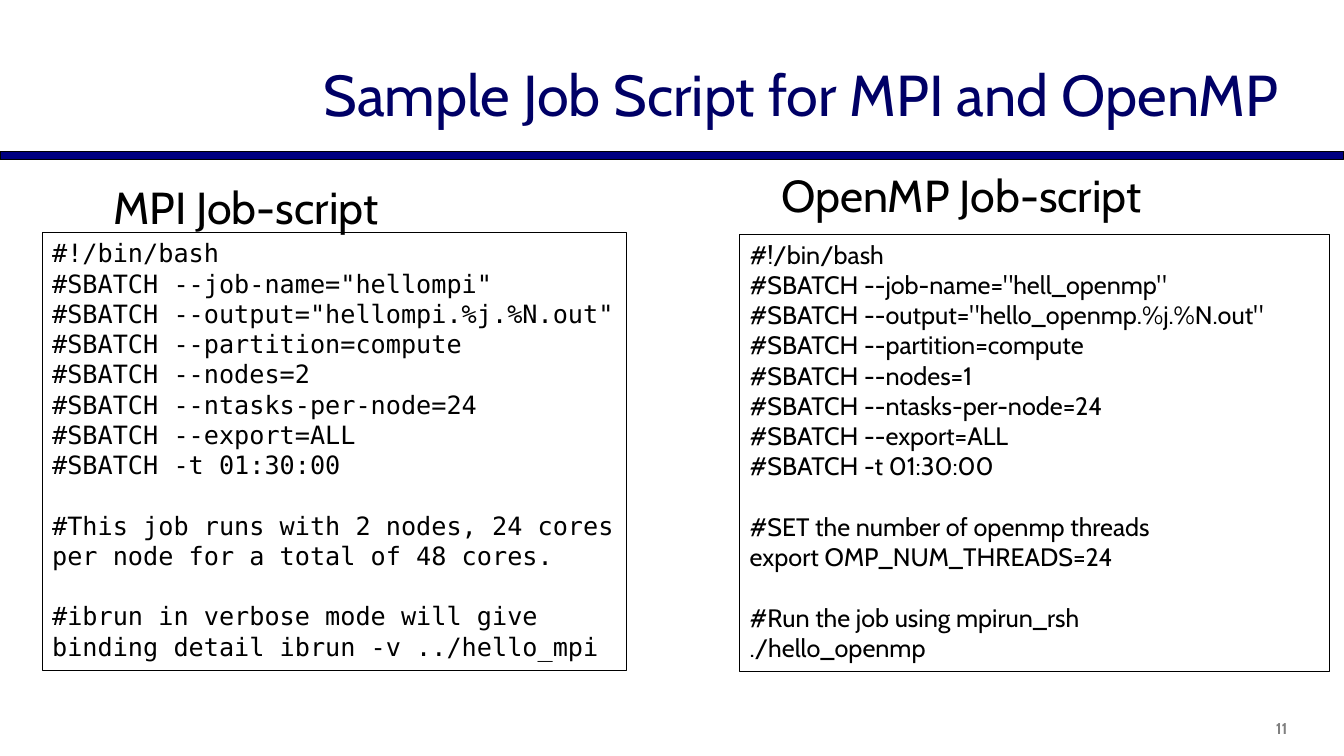
import pptx
import pptx.dml.color
import pptx.enum.shapes
import pptx.enum.text
import pptx.util

Pt = pptx.util.Pt
ALIGN = pptx.enum.text.PP_ALIGN
ANCHOR = pptx.enum.text.MSO_ANCHOR

MPI_SCRIPT = [
    ["#!/bin/bash",
     '#SBATCH --job-name="hellompi"',
     '#SBATCH --output="hellompi.%j.%N.out" #SBATCH --partition=compute',
     "#SBATCH --nodes=2",
     "#SBATCH --ntasks-per-node=24",
     "#SBATCH --export=ALL",
     "#SBATCH -t 01:30:00"],
    ["#This job runs with 2 nodes, 24 cores per node for a total of 48 cores."],
    ["#ibrun in verbose mode will give binding detail ibrun -v ../hello_mpi"],
]
OPENMP_SCRIPT = [
    ["#!/bin/bash",
     '#SBATCH --job-name="hell_openmp"',
     '#SBATCH --output="hello_openmp.%j.%N.out"',
     "#SBATCH --partition=compute",
     "#SBATCH --nodes=1",
     "#SBATCH --ntasks-per-node=24",
     "#SBATCH --export=ALL",
     "#SBATCH -t 01:30:00"],
    ["#SET the number of openmp threads",
     "export OMP_NUM_THREADS=24"],
    ["#Run the job using mpirun_rsh",
     "./hello_openmp"],
]


def color(value):
    return pptx.dml.color.RGBColor.from_string(value)


def write(paragraph, text, size=18, font="Cabin", ink="000000", bold=False,
          align=ALIGN.LEFT, leading=None, before=0):
    paragraph.alignment = align
    paragraph.space_before = Pt(before)
    if leading:
        paragraph.line_spacing = Pt(leading)
    run = paragraph.add_run()
    run.text = text
    run.font.size = Pt(size)
    run.font.name = font
    run.font.bold = bold
    run.font.color.rgb = color(ink)


class JobScriptSlide:
    black = "000000"
    navy = "000080"
    leading = 21.6

    def __init__(self, presentation):
        self.slide = presentation.slides.add_slide(presentation.slide_layouts[6])

    def rectangle(self, left, top, width, height, fill=None):
        shape = self.slide.shapes.add_shape(
            pptx.enum.shapes.MSO_SHAPE.RECTANGLE,
            Pt(left), Pt(top), Pt(width), Pt(height))
        shape.shadow.inherit = False
        if fill:
            shape.fill.solid()
            shape.fill.fore_color.rgb = color(fill)
        else:
            shape.fill.background()
        shape.line.color.rgb = color(self.black)
        shape.line.width = Pt(0.75)
        return shape

    def label(self, left, top, width, height, text, anchor=ANCHOR.TOP, **style):
        box = self.slide.shapes.add_textbox(Pt(left), Pt(top), Pt(width), Pt(height))
        frame = box.text_frame
        frame.word_wrap = True
        frame.vertical_anchor = anchor
        write(frame.paragraphs[0], text, **style)

    def script_panel(self, left, top, width, height, blocks, font):
        frame = self.rectangle(left, top, width, height).text_frame
        frame.word_wrap = True
        frame.vertical_anchor = ANCHOR.TOP
        paragraph = frame.paragraphs[0]
        for block_index, block in enumerate(blocks):
            for line_index, line in enumerate(block):
                if block_index or line_index:
                    paragraph = frame.add_paragraph()
                starts_block = block_index > 0 and line_index == 0
                write(paragraph, line, font=font, leading=self.leading,
                      before=self.leading if starts_block else 0)


def main():
    presentation = pptx.Presentation()
    presentation.slide_width = Pt(960)
    presentation.slide_height = Pt(540)
    page = JobScriptSlide(presentation)

    page.rectangle(0, 108, 960, 5.8, fill=page.navy)
    page.label(904.3, 509.8, 48, 21, "11", size=11.2, ink="808080", bold=True)
    page.label(224, 21.6, 736, 90, "Sample Job Script for MPI and OpenMP",
               anchor=ANCHOR.MIDDLE, size=41.2, ink="000066")
    page.script_panel(30.2, 166.3, 417.6, 312.5, MPI_SCRIPT, "DejaVu Sans Mono")
    page.script_panel(528.4, 167.2, 421.2, 312.5, OPENMP_SCRIPT, "Cabin")
    for left, top, heading in ((6.5, 124.6, "MPI Job-script"),
                               (517.7, 116.6, "OpenMP Job-script")):
        page.label(left, top, 338.4, 46, heading, size=32, align=ALIGN.CENTER)

    presentation.save("out.pptx")


if __name__ == "__main__":
    main()
